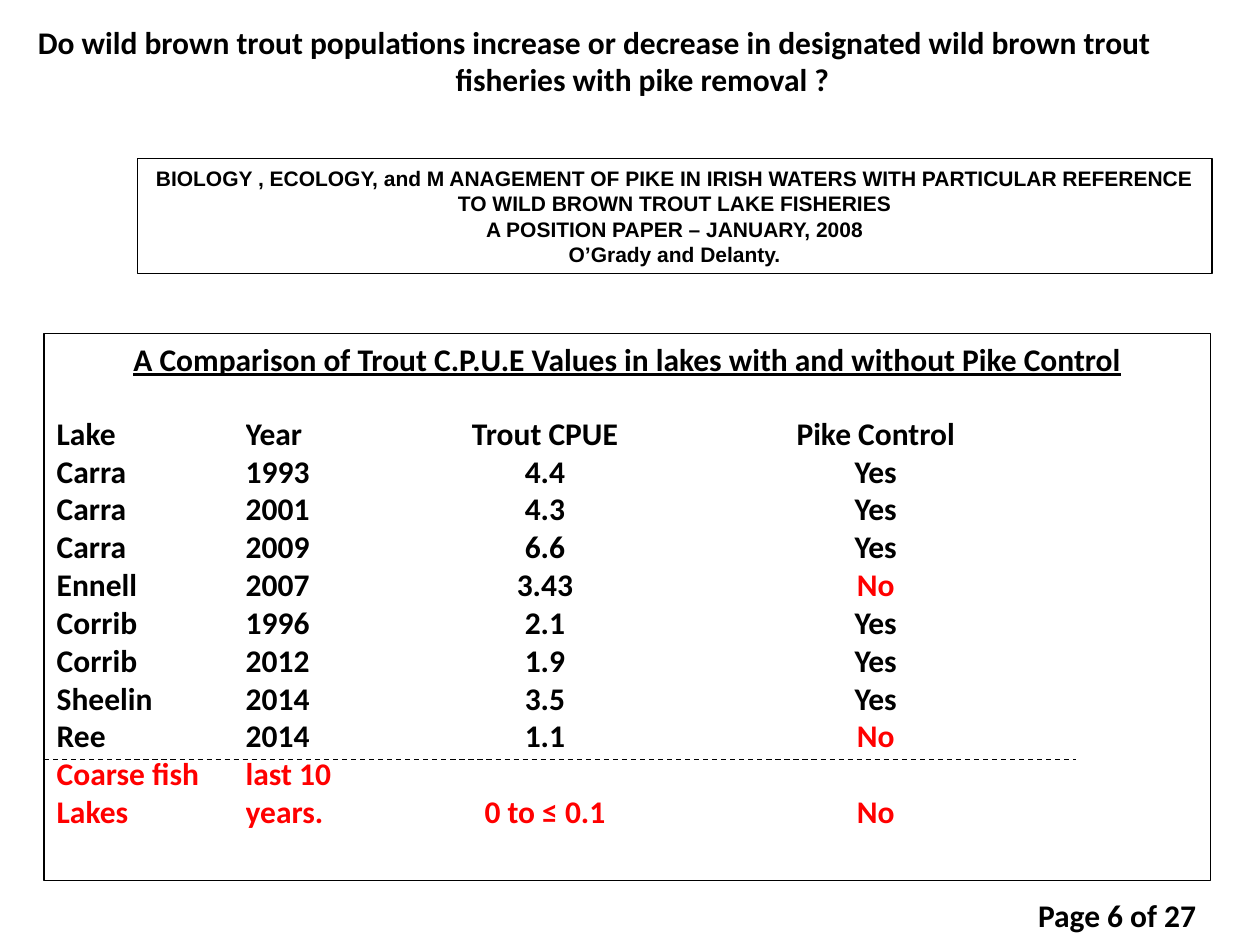
from dataclasses import dataclass

import pptx
import pptx.dml.color
import pptx.enum.dml
import pptx.enum.shapes
import pptx.enum.text
import pptx.util
from lxml import etree

Inches = pptx.util.Inches
Pt = pptx.util.Pt
Align = pptx.enum.text.PP_ALIGN
Anchor = pptx.enum.text.MSO_ANCHOR

BLACK, RED, WHITE = "000000", "FF0000", "FFFFFF"
ROW_HEIGHT = 0.3
TABLE_LEFT, TABLE_TOP = 0.45, 3.3
COLUMN_WIDTHS = (1.5, 1.25, 2.25, 3.0)
COLUMN_ALIGNS = (Align.LEFT, Align.LEFT, Align.CENTER, Align.CENTER)


@dataclass
class Line:
    text: str
    align: Align = Align.LEFT
    size: float = 18
    font: str = "Calibri"
    color: str = BLACK
    underline: bool = False


@dataclass
class Box:
    left: float
    top: float
    width: float
    height: float
    lines: list[Line]
    anchor: Anchor = Anchor.TOP
    wrap: bool = True
    outline: str | None = BLACK
    fill: str | None = None


@dataclass
class LakeRow:
    lake: str
    year: str
    cpue: str
    control: str
    color: str = BLACK


def rgb(value: str) -> pptx.dml.color.RGBColor:
    return pptx.dml.color.RGBColor.from_string(value)


def write(frame, lines: list[Line]) -> None:
    for index, line in enumerate(lines):
        paragraph = frame.paragraphs[0] if index == 0 else frame.add_paragraph()
        paragraph.alignment = line.align
        run = paragraph.add_run()
        run.text = line.text
        run.font.name = line.font
        run.font.size = Pt(line.size)
        run.font.bold = True
        run.font.underline = line.underline
        run.font.color.rgb = rgb(line.color)


def draw_box(slide, box: Box) -> None:
    shape = slide.shapes.add_shape(
        pptx.enum.shapes.MSO_SHAPE.RECTANGLE,
        Inches(box.left), Inches(box.top), Inches(box.width), Inches(box.height))
    shape.shadow.inherit = False
    if box.fill:
        shape.fill.solid()
        shape.fill.fore_color.rgb = rgb(box.fill)
    else:
        shape.fill.background()
    if box.outline:
        shape.line.color.rgb = rgb(box.outline)
        shape.line.width = Pt(0.75)
    else:
        shape.line.fill.background()
    shape.text_frame.word_wrap = box.wrap
    shape.text_frame.vertical_anchor = box.anchor
    write(shape.text_frame, box.lines)


def draw_title(slide, lines: list[Line]) -> None:
    title = slide.shapes.title
    title.left, title.top = Inches(0.2), Inches(0.13)
    title.width, title.height = Inches(9.8), Inches(0.71)
    title.text_frame.word_wrap = True
    title.text_frame.auto_size = pptx.enum.text.MSO_AUTO_SIZE.NONE
    title.text_frame.vertical_anchor = Anchor.TOP
    write(title.text_frame, lines)


def draw_table(slide, rows: list[LakeRow]) -> None:
    table = slide.shapes.add_table(
        len(rows), len(COLUMN_WIDTHS), Inches(TABLE_LEFT), Inches(TABLE_TOP),
        Inches(sum(COLUMN_WIDTHS)), Inches(ROW_HEIGHT * len(rows))).table
    table.first_row = table.horz_banding = False
    for column, width in zip(table.columns, COLUMN_WIDTHS):
        column.width = Inches(width)
    for table_row, row in zip(table.rows, rows):
        table_row.height = Inches(ROW_HEIGHT)
        control_color = RED if row.control == "No" else row.color
        values = (row.lake, row.year, row.cpue, row.control)
        colors = (row.color, row.color, row.color, control_color)
        for cell, value, color, align in zip(table_row.cells, values, colors, COLUMN_ALIGNS):
            cell.fill.background()
            cell.margin_left = cell.margin_right = 0
            cell.margin_top = cell.margin_bottom = 0
            write(cell.text_frame, [Line(value, align, color=color)])
            cell.text_frame.paragraphs[0].line_spacing = Inches(ROW_HEIGHT)


def draw_divider(slide, left: float, right: float, y: float) -> None:
    divider = slide.shapes.add_connector(
        pptx.enum.shapes.MSO_CONNECTOR.STRAIGHT,
        Inches(left), Inches(y), Inches(right), Inches(y))
    divider.line.color.rgb = rgb(BLACK)
    divider.line.width = Pt(0.75)
    divider.line.dash_style = pptx.enum.dml.MSO_LINE.DASH
    namespace = "http://schemas.openxmlformats.org/drawingml/2006/main"
    etree.SubElement(divider._element.spPr, f"{{{namespace}}}effectLst")


QUESTION = [
    Line("Do wild brown trout populations increase or decrease in designated wild brown trout"),
    Line("fisheries with pike removal ?", Align.CENTER),
]

POSITION_PAPER = Box(1.09, 1.26, 8.53, 0.91, [
    Line(text, Align.CENTER, 12, "Arial") for text in (
        "BIOLOGY , ECOLOGY, and M ANAGEMENT OF PIKE IN IRISH WATERS WITH PARTICULAR REFERENCE",
        "TO WILD BROWN TROUT LAKE FISHERIES",
        "A POSITION PAPER – JANUARY, 2008",
        "O’Grady and Delanty.",
    )], anchor=Anchor.MIDDLE, wrap=False)

COMPARISON = Box(0.35, 2.65, 9.26, 4.34, [
    Line("A Comparison of Trout C.P.U.E Values in lakes with and without Pike Control",
         Align.CENTER, underline=True)])

PAGE_NUMBER = Box(8.14, 7.06, 1.47, 0.4, [Line("Page 6 of 27")],
                  wrap=False, outline=None, fill=WHITE)

LAKES = [
    LakeRow("Lake", "Year", "Trout CPUE", "Pike Control"),
    LakeRow("Carra", "1993", "4.4", "Yes"),
    LakeRow("Carra", "2001", "4.3", "Yes"),
    LakeRow("Carra", "2009", "6.6", "Yes"),
    LakeRow("Ennell", "2007", "3.43", "No"),
    LakeRow("Corrib", "1996", "2.1", "Yes"),
    LakeRow("Corrib", "2012", "1.9", "Yes"),
    LakeRow("Sheelin", "2014", "3.5", "Yes"),
    LakeRow("Ree", "2014", "1.1", "No"),
    LakeRow("Coarse fish", "last 10", "", "", RED),
    LakeRow("Lakes", "years.", "0 to ≤ 0.1", "No", RED),
]


def main() -> None:
    deck = pptx.Presentation()
    deck.slide_width, deck.slide_height = Inches(10), Inches(7.5)
    slide = deck.slides.add_slide(deck.slide_layouts[5])

    # Question and its source
    draw_title(slide, QUESTION)
    draw_box(slide, POSITION_PAPER)

    # Framed comparison, with the coarse fish lakes set apart
    draw_box(slide, COMPARISON)
    draw_table(slide, LAKES)
    draw_divider(slide, 0.35, 8.54, 6.03)

    # Page number
    draw_box(slide, PAGE_NUMBER)
    deck.save("out.pptx")


if __name__ == "__main__":
    main()
